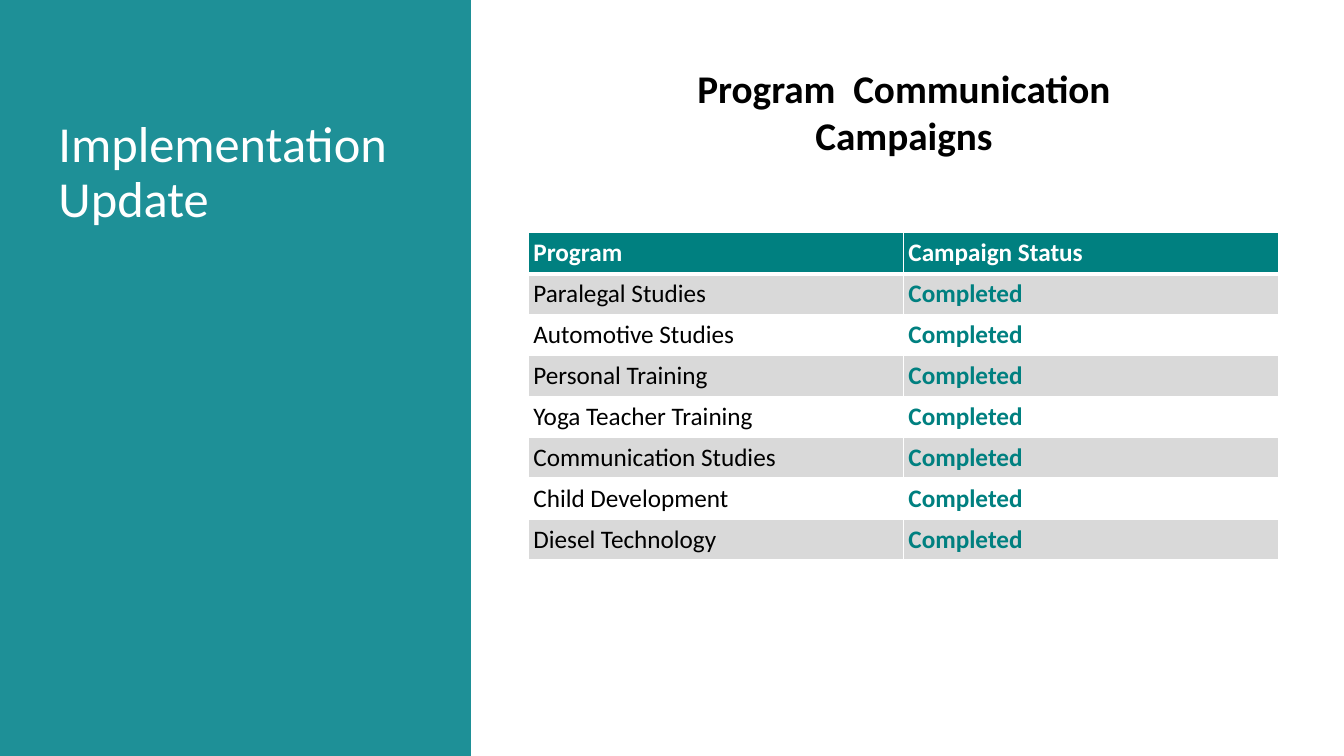
from lxml import etree
from pptx import Presentation
from pptx.dml.color import RGBColor
from pptx.enum import shapes, text
from pptx.oxml import ns
from pptx.util import Inches, Pt

TEAL, WHITE, BLACK, GREY = "008080", "FFFFFF", "000000", "D9D9D9"
PROGRAMS = [
    "Paralegal Studies",
    "Automotive Studies",
    "Personal Training",
    "Yoga Teacher Training",
    "Communication Studies",
    "Child Development",
    "Diesel Technology",
]


def paint(fill, color):
    """Fill with one solid colour."""
    fill.solid()
    fill.fore_color.rgb = RGBColor.from_string(color)


def style(para, size, color, bold=False):
    """Set the font of a paragraph."""
    font = para.font
    font.name, font.size, font.bold = "Calibri", Pt(size), bold
    font.color.rgb = RGBColor.from_string(color)


def inset(box):
    """Give a cell or text frame narrow margins on all sides."""
    box.margin_left = box.margin_right = Inches(0.05)
    box.margin_top = box.margin_bottom = Inches(0.05)


def border(cell, side, width):
    """Draw a white border on one side of a cell."""
    props = cell._tc.get_or_add_tcPr()
    line = etree.SubElement(props, ns.qn("a:ln" + side), w=str(Pt(width)))
    solid = etree.SubElement(line, ns.qn("a:solidFill"))
    etree.SubElement(solid, ns.qn("a:srgbClr"), val=WHITE)


def add_panel(slide):
    """Place the teal side panel behind the title."""
    panel = slide.shapes.add_shape(
        shapes.MSO_SHAPE.RECTANGLE, 0, 0, Inches(4.67), Inches(7.5))
    panel.shadow.inherit = False
    paint(panel.fill, "1E9097")
    panel.line.fill.background()
    slide.shapes.title._element.addprevious(panel._element)


def set_title(slide, words):
    """Place and format the slide title."""
    title = slide.shapes.title
    title.left, title.top = Inches(0.53), Inches(1)
    title.width, title.height = Inches(3.44), Inches(1.45)
    frame = title.text_frame
    frame.text = words
    frame.word_wrap = True
    frame.auto_size = text.MSO_AUTO_SIZE.NONE
    frame.vertical_anchor = text.MSO_ANCHOR.MIDDLE
    inset(frame)
    para = frame.paragraphs[0]
    para.alignment = text.PP_ALIGN.LEFT
    para.line_spacing = 0.9
    style(para, 36, WHITE)


def add_heading(slide, words):
    """Add the centred heading above the table."""
    box = slide.shapes.add_textbox(
        Inches(5.99), Inches(0.59), Inches(5.95), Inches(0.96))
    frame = box.text_frame
    frame.text = words
    frame.word_wrap = True
    frame.auto_size = text.MSO_AUTO_SIZE.SHAPE_TO_FIT_TEXT
    inset(frame)
    para = frame.paragraphs[0]
    para.alignment = text.PP_ALIGN.CENTER
    style(para, 28, BLACK, True)


def add_status(slide, rows):
    """Add the status table with a header and striped rows."""
    table = slide.shapes.add_table(
        len(rows), 2, Inches(5.24), Inches(2.31),
        Inches(7.44), Inches(3.24)).table
    for r, row in enumerate(rows):
        for c, words in enumerate(row):
            cell = table.cell(r, c)
            cell.text = words
            inset(cell)
            for side in "LRTB":
                thick = (r, side) in ((0, "B"), (1, "T"))
                border(cell, side, 3 if thick else 1)
            if r == 0:
                back, color = TEAL, WHITE
            else:
                back = GREY if r % 2 else WHITE
                color = TEAL if c else BLACK
            paint(cell.fill, back)
            style(cell.text_frame.paragraphs[0], 18, color, r == 0 or c == 1)


def main():
    """Build and save the slide."""
    deck = Presentation()
    deck.slide_width, deck.slide_height = Inches(13.33), Inches(7.5)
    slide = deck.slides.add_slide(deck.slide_layouts[5])
    add_panel(slide)
    set_title(slide, "Implementation Update")
    rows = [("Program", "Campaign Status")]
    rows += [(name, "Completed") for name in PROGRAMS]
    add_status(slide, rows)
    add_heading(slide, "Program  Communication Campaigns")
    deck.save("out.pptx")


if __name__ == "__main__":
    main()
